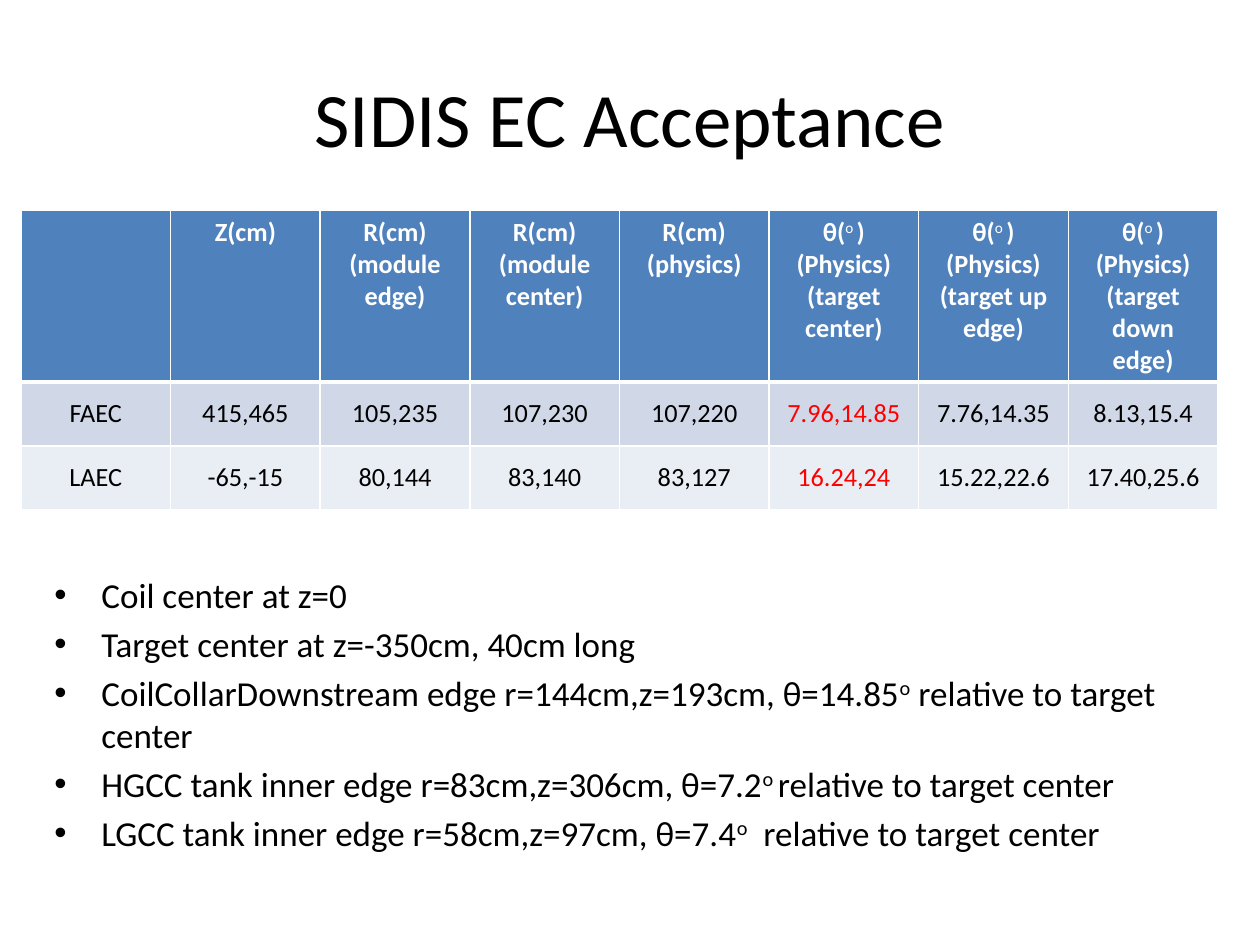
from lxml.etree import SubElement
from pptx import Presentation
from pptx.dml.color import RGBColor
from pptx.enum.text import MSO_ANCHOR, PP_ALIGN
from pptx.oxml.ns import qn
from pptx.util import Emu, Pt

FONT = "Calibri"
BLACK = RGBColor(0x00, 0x00, 0x00)
WHITE = RGBColor(0xFF, 0xFF, 0xFF)
RED = RGBColor(0xFF, 0x00, 0x00)
BLUE = RGBColor(0x4F, 0x81, 0xBD)
BANDS = [RGBColor(0xD0, 0xD8, 0xE8), RGBColor(0xE9, 0xED, 0xF4)]

# Text between two carets is superscript
THETA = "θ(^o ^)\n(Physics)\n"
HEAD = ["", "Z(cm)", "R(cm)\n(module\nedge)", "R(cm)\n(module center)",
        "R(cm)\n(physics)", THETA + "(target center)",
        THETA + "(target up edge)", THETA + "(target down edge)"]
ROWS = [
    ["FAEC", "415,465", "105,235", "107,230", "107,220",
     "7.96,14.85", "7.76,14.35", "8.13,15.4"],
    ["LAEC", "-65,-15", "80,144", "83,140", "83,127",
     "16.24,24", "15.22,22.6", "17.40,25.6"],
]
RED_COL = 5
NOTES = [
    "Coil center at z=0",
    "Target center at z=-350cm, 40cm long",
    "CoilCollarDownstream edge r=144cm,z=193cm, θ=14.85^o^ relative to target center",
    "HGCC tank inner edge r=83cm,z=306cm, θ=7.2^o ^relative to target center",
    "LGCC tank inner edge r=58cm,z=97cm, θ=7.4^o^  relative to target center",
]


def px(n):
    return Emu(round(n * 914400 / 126))


def write(para, text, size, color, bold=False):
    font = para.font
    font.name, font.size, font.bold = FONT, Pt(size), bold
    font.color.rgb = color
    for i, part in enumerate(text.split("^")):
        if not part:
            continue
        run = para.add_run()
        run.text = part
        if i % 2:
            run.font.bold = False
            run._r.get_or_add_rPr().set("baseline", "30000")


def add_lines(frame, lines, size, color, align, bold=False):
    for i, line in enumerate(lines):
        para = frame.paragraphs[0] if i == 0 else frame.add_paragraph()
        para.alignment = align
        write(para, line, size, color, bold)


def add_box(slide, left, top, width, height):
    frame = slide.shapes.add_textbox(px(left), px(top), px(width), px(height)).text_frame
    frame.word_wrap = True
    return frame


def set_bullet(para):
    para.space_before = Pt(4)
    props = para._p.get_or_add_pPr()
    props.set("marL", str(px(47)))
    props.set("indent", str(-px(47)))
    mark = props.makeelement(qn("a:buChar"), {"char": "•"})
    font = props.makeelement(qn("a:buFont"), {"typeface": "Arial"})
    props.find(qn("a:spcBef")).addnext(font)
    font.addnext(mark)


def set_edges(cell, top, bottom):
    props = cell._tc.get_or_add_tcPr()
    for side, width in (("L", 1), ("R", 1), ("T", top), ("B", bottom)):
        line = SubElement(props, qn("a:ln" + side), w=str(Pt(width)))
        fill = SubElement(line, qn("a:solidFill"))
        SubElement(fill, qn("a:srgbClr"), val=str(WHITE))


def add_grid(slide):
    shape = slide.shapes.add_table(len(ROWS) + 1, len(HEAD), px(21), px(210),
                                   px(1197), px(300))
    table = shape.table
    for r, row in enumerate([HEAD] + ROWS):
        head = r == 0
        table.rows[r].height = px(172 if head else 64)
        for c, text in enumerate(row):
            cell = table.cell(r, c)
            set_edges(cell, 3 if r == 1 else 1, 3 if head else 1)
            cell.fill.solid()
            cell.fill.fore_color.rgb = BLUE if head else BANDS[r - 1]
            cell.vertical_anchor = MSO_ANCHOR.TOP if head else MSO_ANCHOR.MIDDLE
            color = WHITE if head else RED if c == RED_COL else BLACK
            add_lines(cell.text_frame, text.split("\n"), 15, color,
                      PP_ALIGN.CENTER, head)


def main():
    deck = Presentation()
    deck.slide_width, deck.slide_height = px(1260), px(945)
    slide = deck.slides.add_slide(deck.slide_layouts[6])

    # Title
    title = add_box(slide, 63, 38, 1134, 157)
    title.vertical_anchor = MSO_ANCHOR.MIDDLE
    add_lines(title, ["SIDIS EC Acceptance"], 44, BLACK, PP_ALIGN.CENTER)

    # Acceptance table
    add_grid(slide)

    # Geometry notes
    notes = add_box(slide, 42, 567, 1144, 299)
    add_lines(notes, NOTES, 20, BLACK, PP_ALIGN.LEFT)
    for para in notes.paragraphs:
        set_bullet(para)

    deck.save("out.pptx")


if __name__ == "__main__":
    main()
